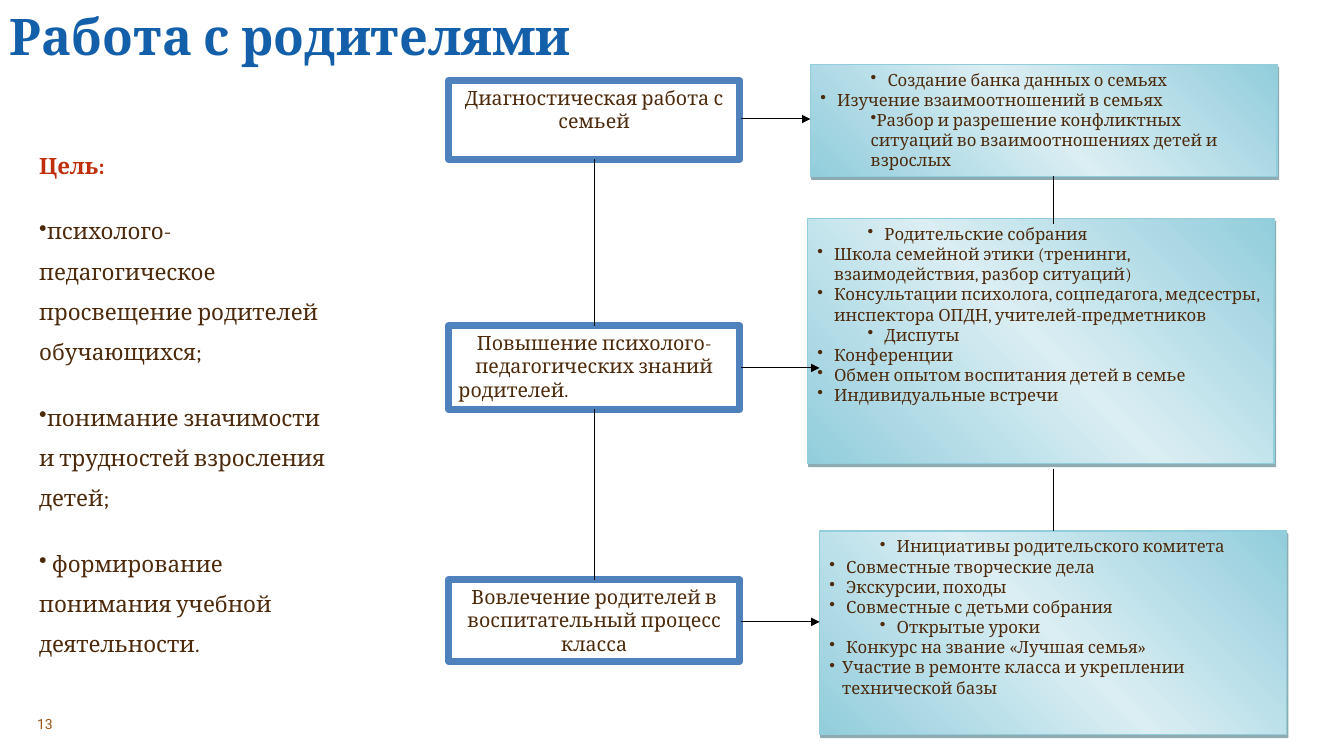
from lxml.etree import SubElement
from pptx import Presentation
from pptx.dml.color import RGBColor
from pptx.enum.shapes import MSO_CONNECTOR, MSO_SHAPE
from pptx.enum.text import MSO_ANCHOR, PP_ALIGN
from pptx.oxml import parse_xml
from pptx.oxml.ns import nsdecls, qn
from pptx.util import Pt

BLUE = RGBColor(0x14, 0x5F, 0xAA)
RED = RGBColor(0xC0, 0x2E, 0x0C)
BROWN = RGBColor(0x4D, 0x2A, 0x0B)
RUST = RGBColor(0x9A, 0x53, 0x15)
FRAME = RGBColor(0x4F, 0x81, 0xBD)
AQUA = RGBColor(0x92, 0xCD, 0xDC)
PALE = RGBColor(0xDA, 0xEE, 0xF3)
SHADE = RGBColor(0x20, 0x58, 0x67)
WHITE = RGBColor(0xFF, 0xFF, 0xFF)
BLACK = RGBColor(0, 0, 0)

GOALS = [
    "психолого-педагогическое просвещение родителей обучающихся;",
    "понимание значимости и трудностей взросления детей;",
    " формирование понимания учебной деятельности.",
]

# Stages: top, height, paragraphs with their alignment
MID, LEFT = PP_ALIGN.CENTER, PP_ALIGN.LEFT
STAGES = [
    (57.6, 56.2, [("Диагностическая работа с семьей", MID)]),
    (232.6, 59.8, [("Повышение психолого-педагогических знаний", MID),
                   ("родителей.", LEFT)]),
    (414, 58.3, [("Вовлечение родителей в воспитательный процесс класса", MID)]),
]

# Forms of work: left, top, height, items as (text, left margin, bullet gap)
FORMS = [
    (578.9, 46.1, 79.9, [
        ("Создание банка данных о семьях", 36, 12),
        ("Изучение взаимоотношений в семьях", 0, 12),
        ("Разбор и разрешение конфликтных ситуаций во взаимоотношениях "
         "детей и взрослых", 36, 0),
    ]),
    (576.7, 156.2, 175, [
        ("Родительские собрания", 36, 12),
        ("Школа семейной этики (тренинги, взаимодействия, разбор ситуаций)",
         0, 12),
        ("Консультации психолога, соцпедагога, медсестры, инспектора ОПДН, "
         "учителей-предметников", 0, 12),
        ("Диспуты", 36, 12),
        ("Конференции", 0, 12),
        ("Обмен опытом воспитания детей в семье", 0, 12),
        ("Индивидуальные встречи", 0, 12),
    ]),
    (585.4, 379.4, 145.4, [
        ("Инициативы родительского комитета", 36, 12),
        ("Совместные творческие дела", 0, 12),
        ("Экскурсии, походы", 0, 12),
        ("Совместные с детьми собрания", 0, 12),
        ("Открытые уроки", 36, 12),
        ("Конкурс на звание «Лучшая семья»", 0, 12),
        ("Участие в ремонте класса и укреплении технической базы", 0, 9),
    ]),
]

# Links: start x, start y, end x, end y, arrow
LINKS = [
    (424.8, 113.8, 424.8, 232.6, False),
    (424.8, 292.3, 424.8, 414, False),
    (752.4, 126, 752.4, 159.8, False),
    (752.4, 334.8, 752.4, 379.4, False),
    (529.2, 85, 578.9, 85, True),
    (529.2, 262.8, 585.4, 262.8, True),
    (529.2, 444.2, 585.4, 444.2, True),
]


def style(par, size, color, bold=False, name="Cambria"):
    font = par.font
    font.size, font.bold, font.name = Pt(size), bold, name
    font.color.rgb = color


def bullet(par, left=0, gap=0):
    props = par._p.get_or_add_pPr()
    props.set("marL", str(Pt(left + gap)))
    props.set("indent", str(-Pt(gap)))
    SubElement(props, qn("a:buChar")).set("char", "•")


def add_pars(frame, texts):
    """Fill the frame and return its paragraphs."""
    frame.word_wrap = True
    frame.text = "\n".join(texts)
    return frame.paragraphs


def add_text(slide, left, top, width, height, texts):
    box = slide.shapes.add_textbox(Pt(left), Pt(top), Pt(width), Pt(height))
    return box.text_frame, add_pars(box.text_frame, texts)


def add_box(slide, left, top, width, height, edge, weight):
    box = slide.shapes.add_shape(
        MSO_SHAPE.RECTANGLE, Pt(left), Pt(top), Pt(width), Pt(height))
    box.shadow.inherit = False
    box.line.color.rgb = edge
    box.line.width = Pt(weight)
    box.text_frame.vertical_anchor = MSO_ANCHOR.TOP
    return box


def add_stage(slide, top, height, lines):
    box = add_box(slide, 320.4, top, 208.1, height, FRAME, 5)
    box.fill.solid()
    box.fill.fore_color.rgb = WHITE
    pars = add_pars(box.text_frame, [text for text, _ in lines])
    for par, (_, align) in zip(pars, lines):
        par.alignment = align
        style(par, 14, BROWN)


def add_form(slide, left, top, height, items):
    box = add_box(slide, left, top, 333.4, height, AQUA, 1)
    # Three-stop gradient and hard shadow
    props = box._element.spPr
    stops = "".join(
        f'<a:gs pos="{pos}"><a:srgbClr val="{color}"/></a:gs>'
        for pos, color in ((0, AQUA), (50000, PALE), (100000, AQUA)))
    props.find(qn("a:prstGeom")).addnext(parse_xml(
        f'<a:gradFill {nsdecls("a")} rotWithShape="1"><a:gsLst>{stops}'
        '</a:gsLst><a:lin ang="18900000" scaled="1"/></a:gradFill>'))
    props.find(qn("a:effectLst")).append(parse_xml(
        f'<a:outerShdw {nsdecls("a")} blurRad="0" dist="{Pt(2.2)}" '
        f'dir="3780000" algn="ctr" rotWithShape="0"><a:srgbClr val="{SHADE}">'
        '<a:alpha val="50000"/></a:srgbClr></a:outerShdw>'))
    pars = add_pars(box.text_frame, [text for text, _, _ in items])
    for par, (_, inset, gap) in zip(pars, items):
        bullet(par, inset, gap)
        par.alignment = LEFT
        style(par, 12, BROWN)


def add_link(slide, x1, y1, x2, y2, arrow):
    link = slide.shapes.add_connector(
        MSO_CONNECTOR.STRAIGHT, Pt(x1), Pt(y1), Pt(x2), Pt(y2))
    link.line.color.rgb = BLACK
    link.line.width = Pt(0.75)
    if arrow:
        edge = link.line._get_or_add_ln()
        SubElement(edge, qn("a:tailEnd")).set("type", "triangle")
    SubElement(link._element.spPr, qn("a:effectLst"))


def add_title(slide, text):
    title = slide.shapes.title
    title.left, title.top = Pt(-40.3), Pt(14.4)
    title.width, title.height = Pt(495.4), Pt(77.8)
    frame = title.text_frame
    frame.vertical_anchor = MSO_ANCHOR.BOTTOM
    frame.margin_bottom = Pt(45)
    par = add_pars(frame, [text])[0]
    par.alignment, par.line_spacing = MID, 0.9
    style(par, 36, BLUE, True)


def add_goals(slide):
    _, pars = add_text(slide, 20.9, 105.1, 225.4, 356.4, ["Цель:"] + GOALS)
    style(pars[0], 16, RED, True)
    for par in pars[1:]:
        par.line_spacing, par.space_before = 1.5, Pt(18)
        bullet(par)
        style(par, 16, BROWN)


def main():
    deck = Presentation()
    deck.slide_width, deck.slide_height = Pt(960), Pt(540)
    slide = deck.slides.add_slide(deck.slide_layouts[5])

    # Title, goals and page number
    add_title(slide, "Работа с родителями")
    add_goals(slide)
    frame, pars = add_text(slide, 19.4, 508.3, 59.8, 18, ["13"])
    frame.vertical_anchor = MSO_ANCHOR.MIDDLE
    style(pars[0], 10, RUST, name="Roboto")

    # Diagram
    for stage in STAGES:
        add_stage(slide, *stage)
    for form in FORMS:
        add_form(slide, *form)
    for link in LINKS:
        add_link(slide, *link)

    deck.save("out.pptx")


if __name__ == "__main__":
    main()
